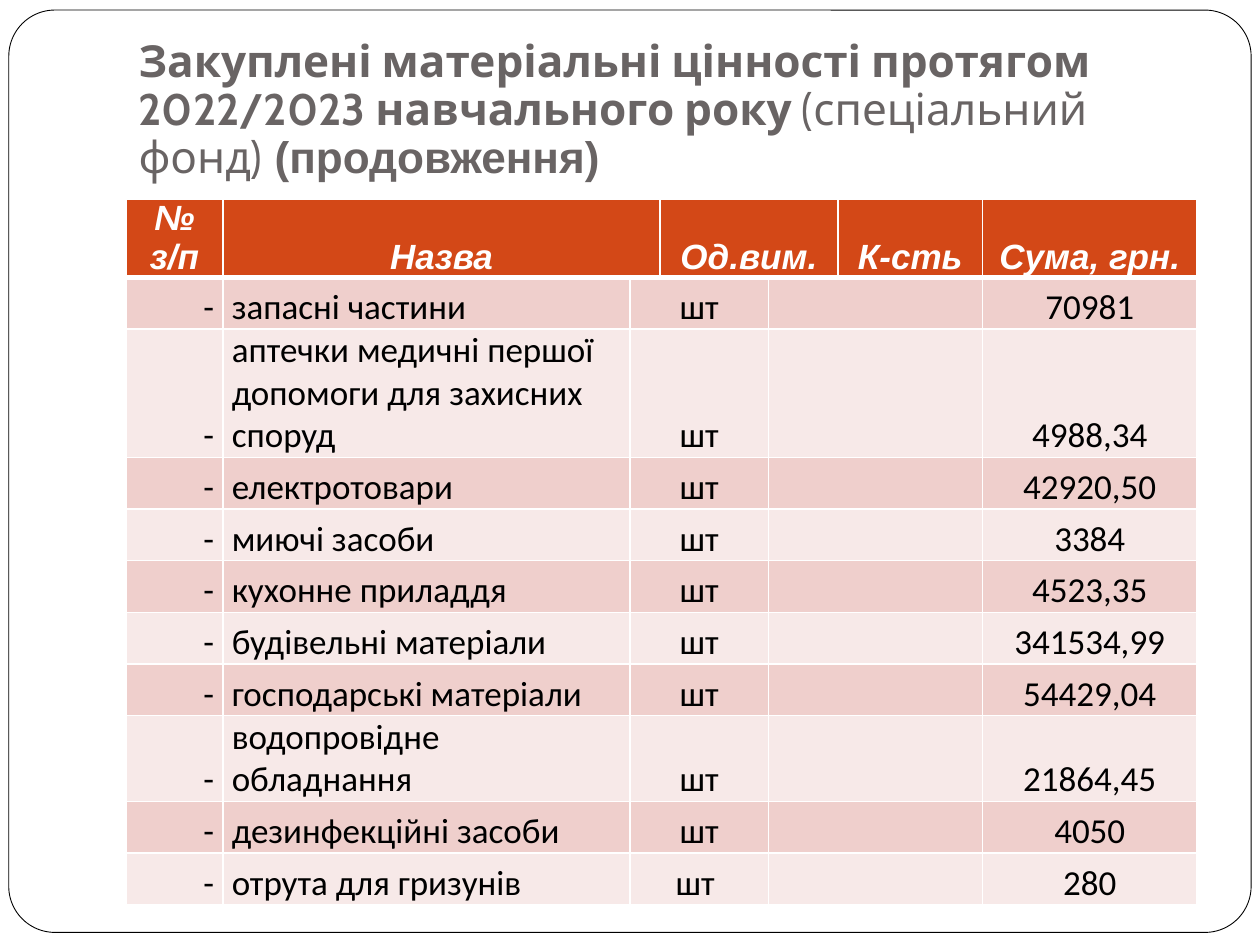
import pptx
import pptx.dml.color
import pptx.enum.shapes
import pptx.enum.text
import pptx.oxml
import pptx.oxml.ns
import pptx.util

Inches = pptx.util.Inches
Pt = pptx.util.Pt
ALIGN = pptx.enum.text.PP_ALIGN
ANCHOR = pptx.enum.text.MSO_ANCHOR

HEADERS = {0: "№ з/п", 1: "Назва", 3: "Од.вим.", 5: "К-сть", 6: "Сума, грн."}
PURCHASES = [
    ("запасні частини", "шт", "70981"),
    ("аптечки медичні першої допомоги для захисних споруд", "шт", "4988,34"),
    ("електротовари", "шт", "42920,50"),
    ("миючі засоби", "шт", "3384"),
    ("кухонне приладдя", "шт", "4523,35"),
    ("будівельні матеріали", "шт", "341534,99"),
    ("господарські матеріали", "шт", "54429,04"),
    ("водопровідне обладнання", "шт", "21864,45"),
    ("дезинфекційні засоби", "шт", "4050"),
    ("отрута для гризунів", "шт ", "280"),
]
COLUMN_WIDTHS = [0.77, 3.23, 0.24, 0.86, 0.55, 1.15, 1.7]
BODY_ALIGN = {0: ALIGN.RIGHT, 1: ALIGN.LEFT, 2: ALIGN.CENTER, 6: ALIGN.CENTER}
HEADER_SPANS = [1, 3]
BODY_SPANS = [2, 4]


def color(value):
    return pptx.dml.color.RGBColor.from_string(value)


class SlideBuilder:
    white, black, gray = "FFFFFF", "000000", "696464"
    header_fill = "D34817"
    bands = ["EFCFCC", "F7E9E8"]

    def __init__(self, deck):
        self.page = deck.slides.add_slide(deck.slide_layouts[5])

    def frame(self, left, top, width, height):
        shape = self.page.shapes.add_shape(
            pptx.enum.shapes.MSO_SHAPE.ROUNDED_RECTANGLE,
            Inches(left), Inches(top), Inches(width), Inches(height))
        shape.adjustments[0] = 0.05
        shape.shadow.inherit = False
        shape.fill.solid()
        shape.fill.fore_color.rgb = color(self.white)
        shape.line.color.rgb = color(self.black)
        shape.line.width = Pt(0.5)
        # Send the frame behind the title
        self.page.shapes.title.element.addprevious(shape.element)

    def title(self, left, top, width, height, spans):
        box = self.page.shapes.title
        box.left, box.top = Inches(left), Inches(top)
        box.width, box.height = Inches(width), Inches(height)
        text_frame = box.text_frame
        text_frame.word_wrap = True
        text_frame.auto_size = pptx.enum.text.MSO_AUTO_SIZE.NONE
        text_frame.vertical_anchor = ANCHOR.BOTTOM
        text_frame.margin_bottom = Inches(0.1)
        para = text_frame.paragraphs[0]
        para.alignment = ALIGN.LEFT
        para.line_spacing = 0.9
        for text, font, bold in spans:
            span = para.add_run()
            span.text = text
            self.style(span, font, 25.2, self.gray, bold)

    def style(self, span, font, size, text_color, bold=False, italic=False):
        span.font.name, span.font.size = font, Pt(size)
        span.font.bold, span.font.italic = bold, italic
        span.font.color.rgb = color(text_color)

    def borders(self, cell, top, bottom):
        properties = cell._tc.get_or_add_tcPr()
        for side, width in zip("LRTB", [1, 1, top, bottom]):
            properties.append(pptx.oxml.parse_xml(
                f'<a:ln{side} {pptx.oxml.ns.nsdecls("a")} w="{Pt(width)}">'
                f'<a:solidFill><a:srgbClr val="{self.white}"/></a:solidFill>'
                f'</a:ln{side}>'))

    def cell_text(self, cell, text, align, font, text_color, emphasis):
        cell.text_frame.text = text
        cell.vertical_anchor = ANCHOR.BOTTOM
        cell.margin_left = cell.margin_right = Inches(0.07)
        cell.margin_top = cell.margin_bottom = 0
        para = cell.text_frame.paragraphs[0]
        para.alignment = align
        self.style(para.runs[0], font, 20, text_color, emphasis, emphasis)

    def table(self, left, top, width, row_height):
        row_count = len(PURCHASES) + 1
        table = self.page.shapes.add_table(
            row_count, len(COLUMN_WIDTHS), Inches(left), Inches(top),
            Inches(width), Inches(row_height * row_count)).table
        for column, column_width in zip(table.columns, COLUMN_WIDTHS):
            column.width = Inches(column_width)

        for row in range(row_count):
            is_header = row == 0
            table.rows[row].height = Inches(row_height)
            fill = self.header_fill if is_header else self.bands[(row - 1) % 2]
            for column in range(len(COLUMN_WIDTHS)):
                cell = table.cell(row, column)
                self.borders(cell, 3 if row == 1 else 1, 3 if is_header else 1)
                cell.fill.solid()
                cell.fill.fore_color.rgb = color(fill)
            # Header and body join different pairs of columns
            for column in HEADER_SPANS if is_header else BODY_SPANS:
                table.cell(row, column).merge(table.cell(row, column + 1))

        for column, text in HEADERS.items():
            self.cell_text(table.cell(0, column), text, ALIGN.CENTER,
                           "Arial", self.white, True)
        for row, purchase in enumerate(PURCHASES, 1):
            for (column, align), text in zip(BODY_ALIGN.items(), (" -", *purchase)):
                self.cell_text(table.cell(row, column), text, align,
                               "Calibri", self.black, False)


def main():
    deck = pptx.Presentation()
    deck.slide_width, deck.slide_height = Inches(10), Inches(7.5)
    builder = SlideBuilder(deck)

    # Background frame and heading
    builder.frame(0.07, 0.08, 9.86, 7.32)
    builder.title(1, 0.3, 8.5, 1.25, [
        ("Закуплені матеріальні цінності протягом 2022/2023 навчального року ",
         "Cabin", True),
        ("(спеціальний фонд)", "Cabin", False),
        (" (продовження)", "Arial", True),
    ])

    # Purchases
    builder.table(1, 1.58, 8.5, 0.41)
    deck.save("out.pptx")


if __name__ == "__main__":
    main()
